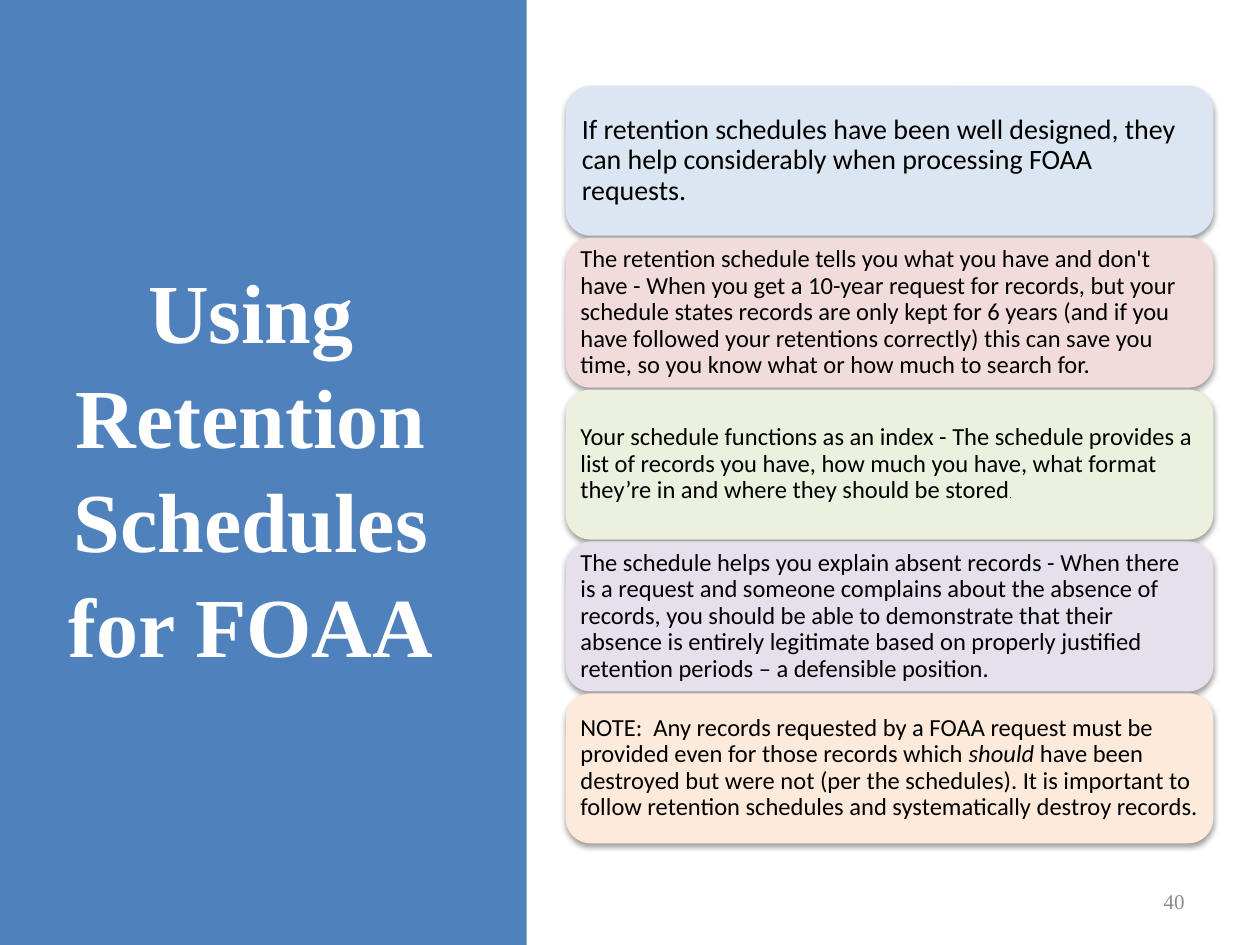
from lxml.etree import SubElement
from pptx import Presentation
from pptx.dml.color import RGBColor
from pptx.enum.shapes import MSO_SHAPE
from pptx.enum.text import MSO_ANCHOR, MSO_AUTO_SIZE, PP_ALIGN
from pptx.oxml.ns import qn
from pptx.util import Pt

COLORS = {
    "panel": "4F81BD", "white": "FFFFFF", "black": "000000", "number": "8C8C8C",
    "blue": "DCE6F2", "red": "F2DCDB", "green": "EBF1DE",
    "purple": "E6E0EC", "orange": "FDEADA",
}
TITLE = "Using Retention Schedules for FOAA"
SLIDE_NUMBER = "40"
BODY, ITALIC, TINY = {"size": 14}, {"size": 14, "italic": True}, {"size": 5}
CARDS = [
    ("blue", 5, [("If retention schedules have been well designed, they can help "
                  "considerably when processing FOAA requests.", {"size": 16})]),
    ("red", 4.2, [("The retention schedule tells you what you have and don't have - "
                   "When you get a 10-year request for records, but your schedule states "
                   "records are only kept for 6 years (and if you have followed your "
                   "retentions correctly) this can save you time, so you know what or how "
                   "much to search for.", BODY)]),
    ("green", 4.2, [("Your schedule functions as an index - The schedule provides a list of "
                     "records you have, how much you have, what format they’re in and where "
                     "they should be stored", BODY), (".", TINY)]),
    ("purple", 4.2, [("The schedule helps you explain absent records - When there is a request "
                      "and someone complains about the absence of  records, you should be able "
                      "to demonstrate that their absence is entirely legitimate based on "
                      "properly justified retention periods – a defensible position.", BODY)]),
    ("orange", 4.2, [("NOTE:  Any records requested by a FOAA request must be provided even for "
                      "those records which ", BODY), ("should", ITALIC),
                     (" have been destroyed but were not (per the schedules). It is important "
                      "to follow retention schedules and systematically destroy records.", BODY)]),
]
CARD_LEFT, CARD_TOP, CARD_WIDTH, CARD_HEIGHT, CARD_PITCH = 323.3, 49, 370, 85.7, 86.8


def color(name):
    return RGBColor.from_string(COLORS[name])


def apply(target, values):
    for key, value in values.items():
        setattr(target, key, value)


def add_run(paragraph, text, tint, size, **style):
    run = paragraph.add_run()
    run.text = text
    apply(run.font, {"size": Pt(size), **style})
    run.font.color.rgb = color(tint)


def add_block(slide, kind, fill, box):
    block = slide.shapes.add_shape(kind, *map(Pt, box))
    block.shadow.inherit = False
    block.fill.solid()
    block.fill.fore_color.rgb = color(fill)
    block.line.fill.background()
    return block


def add_shadow(block):
    effects = block._element.spPr.find(qn("a:effectLst"))
    shadow = SubElement(effects, qn("a:outerShdw"), blurRad=str(Pt(3.1)),
                        dist=str(Pt(1.6)), dir="5400000", rotWithShape="0")
    tint = SubElement(shadow, qn("a:srgbClr"), val=COLORS["black"])
    SubElement(tint, qn("a:alpha"), val="38000")


def add_card(slide, index, fill, inset, runs):
    top = CARD_TOP + index * CARD_PITCH
    card = add_block(slide, MSO_SHAPE.ROUNDED_RECTANGLE, fill,
                     (CARD_LEFT, top, CARD_WIDTH, CARD_HEIGHT))
    add_shadow(card)
    frame = card.text_frame
    apply(frame, {"word_wrap": True, "vertical_anchor": MSO_ANCHOR.MIDDLE})
    for side in ("left", "top", "right", "bottom"):
        setattr(frame, f"margin_{side}", Pt(inset))
    paragraph = frame.paragraphs[0]
    apply(paragraph, {"alignment": PP_ALIGN.LEFT, "line_spacing": 0.9})
    for text, style in runs:
        add_run(paragraph, text, "black", name="Calibri", **style)


def main():
    deck = Presentation()
    apply(deck, {"slide_width": Pt(720), "slide_height": Pt(540)})
    slide = deck.slides.add_slide(deck.slide_layouts[5])

    panel = add_block(slide, MSO_SHAPE.RECTANGLE, "panel", (0, 0, 301, 540))
    title = slide.shapes.title
    title._element.addprevious(panel._element)
    apply(title, {"left": Pt(31), "top": Pt(49), "width": Pt(224.6), "height": Pt(433.4)})
    apply(title.text_frame, {"word_wrap": True, "auto_size": MSO_AUTO_SIZE.NONE,
                             "vertical_anchor": MSO_ANCHOR.MIDDLE})
    heading = title.text_frame.paragraphs[0]
    apply(heading, {"alignment": PP_ALIGN.CENTER, "line_spacing": 1.04})
    add_run(heading, TITLE, "white", 48, name="Times New Roman", bold=True)

    for index, (fill, inset, runs) in enumerate(CARDS):
        add_card(slide, index, fill, inset, runs)

    number = slide.shapes.add_textbox(*map(Pt, (516, 500.5, 168, 28.8)))
    apply(number.text_frame, {"word_wrap": True, "vertical_anchor": MSO_ANCHOR.MIDDLE})
    page = number.text_frame.paragraphs[0]
    page.alignment = PP_ALIGN.RIGHT
    add_run(page, SLIDE_NUMBER, "number", 12, name="Times New Roman")

    deck.save("out.pptx")


if __name__ == "__main__":
    main()
